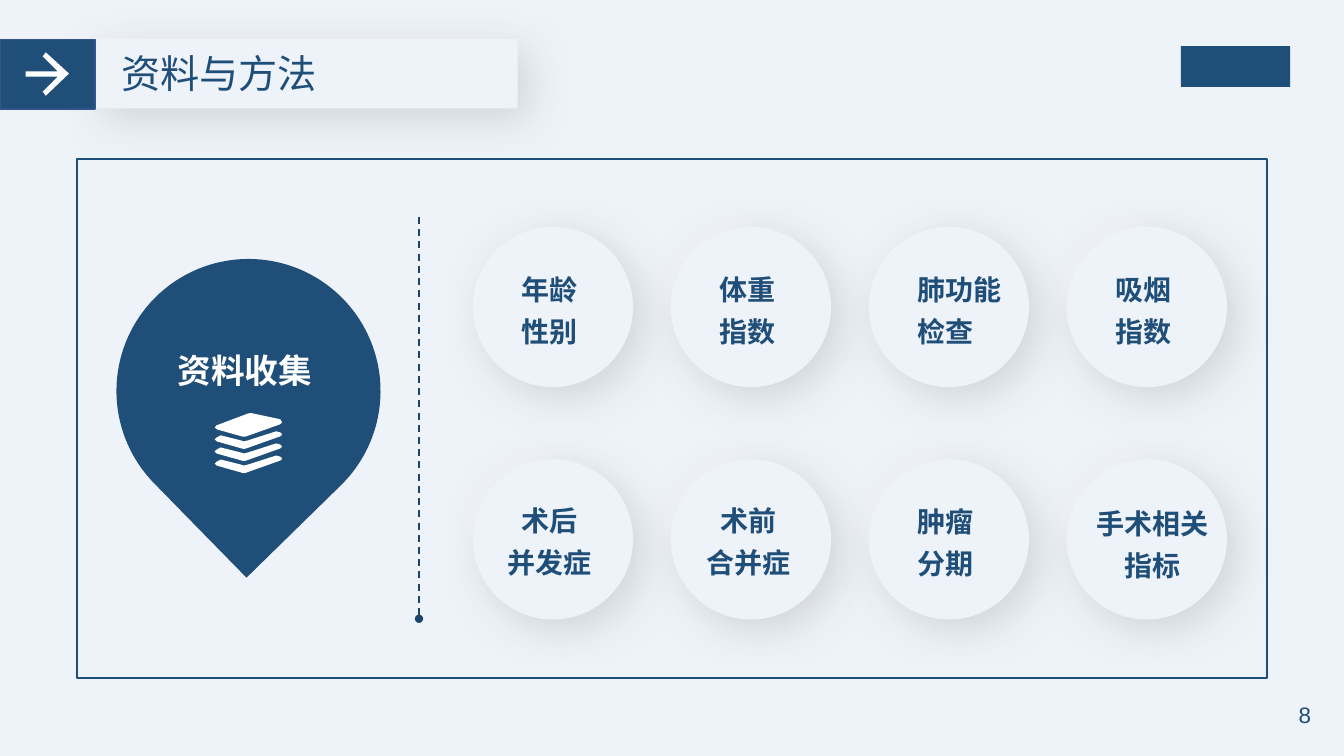
from lxml import etree
from pptx import Presentation
from pptx.dml.color import RGBColor
from pptx.enum.dml import MSO_LINE
from pptx.enum.shapes import MSO_CONNECTOR, MSO_SHAPE
from pptx.enum.text import MSO_ANCHOR, MSO_AUTO_SIZE, PP_ALIGN
from pptx.oxml.ns import qn
from pptx.util import Pt

RECTANGLE, OVAL, TEAR = MSO_SHAPE.RECTANGLE, MSO_SHAPE.OVAL, MSO_SHAPE.TEAR
LEFT, CENTER, RIGHT = PP_ALIGN.LEFT, PP_ALIGN.CENTER, PP_ALIGN.RIGHT
TOP, MIDDLE = MSO_ANCHOR.TOP, MSO_ANCHOR.MIDDLE
LATIN, CHINESE = "Arial", "Noto Sans CJK SC"
COLORS = {
    "paper": "EEF2F9",
    "navy": "1F4E79",
    "edge": "325491",
    "divider": "1B456B",
    "white": "FFFFFF",
    "shade": "CACED4",
}
GLOW_SHIFT, GLOW_SPREAD, GLOW_BLUR = 10.6, 10, 20


def add_plain(kind, left, top, width, height, fill, effect=None):
    shape = page.shapes.add_shape(kind, Pt(left), Pt(top), Pt(width), Pt(height))
    shape.shadow.inherit = False
    shape.line.fill.background()
    if fill:
        shape.fill.solid()
        shape.fill.fore_color.rgb = RGBColor.from_string(COLORS[fill])
    else:
        shape.fill.background()
    effects = shape.element.spPr.find(qn("a:effectLst"))
    if effect == "glow":
        shape.left, shape.top = (Pt(edge - GLOW_SHIFT - GLOW_SPREAD) for edge in (left, top))
        shape.width, shape.height = (Pt(side + 2 * GLOW_SPREAD) for side in (width, height))
        etree.SubElement(effects, qn("a:softEdge"), rad=str(Pt(GLOW_BLUR)))
    elif effect == "shade":
        outer = etree.SubElement(
            effects, qn("a:outerShdw"), blurRad=str(Pt(30)), dist=str(Pt(10)),
            dir=str(45 * 60000), algn="ctr", rotWithShape="0")
        tone = etree.SubElement(outer, qn("a:srgbClr"), val=COLORS["shade"])
        etree.SubElement(tone, qn("a:alpha"), val="80000")
    return shape


def write(box, text, size, color, font, align=LEFT, spacing=1.0, bold=False, wrap=False, anchor=TOP):
    frame = box.text_frame
    frame.text = text
    frame.word_wrap = wrap
    frame.auto_size = MSO_AUTO_SIZE.SHAPE_TO_FIT_TEXT
    frame.vertical_anchor = anchor
    for para in frame.paragraphs:
        para.alignment = align
        para.line_spacing = spacing
        for span in para.runs:
            span.font.name = font
            span.font.size = Pt(size)
            span.font.bold = bold
            span.font.color.rgb = RGBColor.from_string(COLORS[color])
            if font == CHINESE:
                etree.SubElement(span.font._element, qn("a:ea"), typeface=font)


deck = Presentation()
deck.slide_width, deck.slide_height = Pt(960), Pt(540)
page = deck.slides.add_slide(deck.slide_layouts[5])
page.background.fill.solid()
page.background.fill.fore_color.rgb = RGBColor.from_string(COLORS["paper"])

for fill, effect in (("white", "glow"), ("paper", "shade")):
    add_plain(RECTANGLE, 67.8, 28, 302, 49.5, fill, effect)
arrow_tile = add_plain(RECTANGLE, 0, 28.3, 68, 49.5, "navy")
arrow_tile.line.color.rgb = RGBColor.from_string(COLORS["edge"])
arrow_tile.line.width = Pt(1)

title = page.shapes.title
title.element.getparent().append(title.element)
title.left, title.top, title.width, title.height = Pt(79.5), Pt(31.7), Pt(156), Pt(41)
write(title, "资料与方法", 28, "navy", LATIN)

add_plain(RECTANGLE, 843.5, 33, 78, 29, "navy")

page_number = page.shapes.add_textbox(Pt(899), Pt(496), Pt(44.6), Pt(29))
write(page_number, "8", 16, "navy", LATIN, RIGHT, wrap=True, anchor=MIDDLE)

pin = add_plain(TEAR, 83.2, 185, 188.6, 188.6, "navy")
pin.rotation = 135.6
pin_label = page.shapes.add_textbox(Pt(119.8), Pt(237.6), Pt(116), Pt(41))
write(pin_label, "资料收集", 24, "white", CHINESE, spacing=1.3, bold=True, wrap=True)

arrow = [(41.3, 54.7), (30.5, 65.5), (32.7, 68.4), (49.3, 52.6), (32.7, 37.4),
         (30.5, 40.3), (41.3, 51.1), (18.3, 51.1), (18.3, 54.7)]
top_sheet = [(178.6, 295.2), (180, 295.2), (200.2, 299.5), (201.6, 301.7), (200.2, 303.1),
             (175.7, 311.8), (174.2, 312), (172.8, 311.8), (154.8, 306.7), (153.4, 305.3),
             (154.8, 303.8), (177.1, 295.4)]
lower_sheet = [(197.3, 308.1), (200.2, 308.9), (201.6, 310.3), (200.2, 311.7), (175.7, 320.4),
               (174.2, 320.7), (172.8, 320.4), (154.8, 315.3), (153.4, 313.9), (154.8, 312.5),
               (157.7, 311), (172.1, 314.6), (174.2, 315.3), (177.1, 314.6)]
stack = [top_sheet] + [[(x, y + 8.65 * layer) for x, y in lower_sheet] for layer in range(3)]
for contours in ([arrow], stack):
    builder = None
    for contour in contours:
        points = [(Pt(x), Pt(y)) for x, y in contour]
        if builder is None:
            builder = page.shapes.build_freeform(*points[0])
        else:
            builder.move_to(*points[0])
        builder.add_line_segments(points[1:], close=True)
    icon = builder.convert_to_shape()
    icon.shadow.inherit = False
    icon.fill.solid()
    icon.fill.fore_color.rgb = RGBColor.from_string(COLORS["white"])
    icon.line.fill.background()

DIAMETER, PITCH_X, PITCH_Y = 114.5, 141.4, 166
items = [
    ("年龄\n性别", 27.5, 23, LEFT, False),
    ("体重\n指数", 27.5, 23, LEFT, True),
    ("肺功能\n检查", 27.5, 23, LEFT, False),
    ("吸烟\n指数", 27.5, 23, LEFT, True),
    ("术后\n并发症", 17.5, 22, CENTER, True),
    ("术前\n合并症", 18.3, 22, CENTER, True),
    ("肿瘤\n分期", 27.5, 22.5, LEFT, True),
    ("手术相关\n指标", 14, 24.5, CENTER, True),
]
for index, (text, inset_x, inset_y, align, glowing) in enumerate(items):
    row, column = divmod(index, 4)
    left, top = 337.7 + PITCH_X * column, 162 + PITCH_Y * row
    if glowing:
        add_plain(OVAL, left, top, DIAMETER, DIAMETER, "white", "glow")
    add_plain(OVAL, left, top, DIAMETER, DIAMETER, "paper", "shade")
    width = 14.4 + 20 * max(len(line) for line in text.split("\n"))
    label = page.shapes.add_textbox(Pt(left + inset_x), Pt(top + inset_y), Pt(width), Pt(65))
    write(label, text, 20, "navy", CHINESE, align, 1.25, True)

frame_box = add_plain(RECTANGLE, 55, 113.4, 850, 371, None)
frame_box.line.color.rgb = RGBColor.from_string(COLORS["navy"])
frame_box.line.width = Pt(1.5)

divider = page.shapes.add_connector(MSO_CONNECTOR.STRAIGHT, Pt(299.3), Pt(155), Pt(299.3), Pt(442))
divider.line.color.rgb = RGBColor.from_string(COLORS["divider"])
divider.line.width = Pt(1.25)
divider.line.dash_style = MSO_LINE.DASH
etree.SubElement(divider.line._get_or_add_ln(), qn("a:tailEnd"), type="oval")
etree.SubElement(divider.element.spPr, qn("a:effectLst"))

deck.save("out.pptx")
